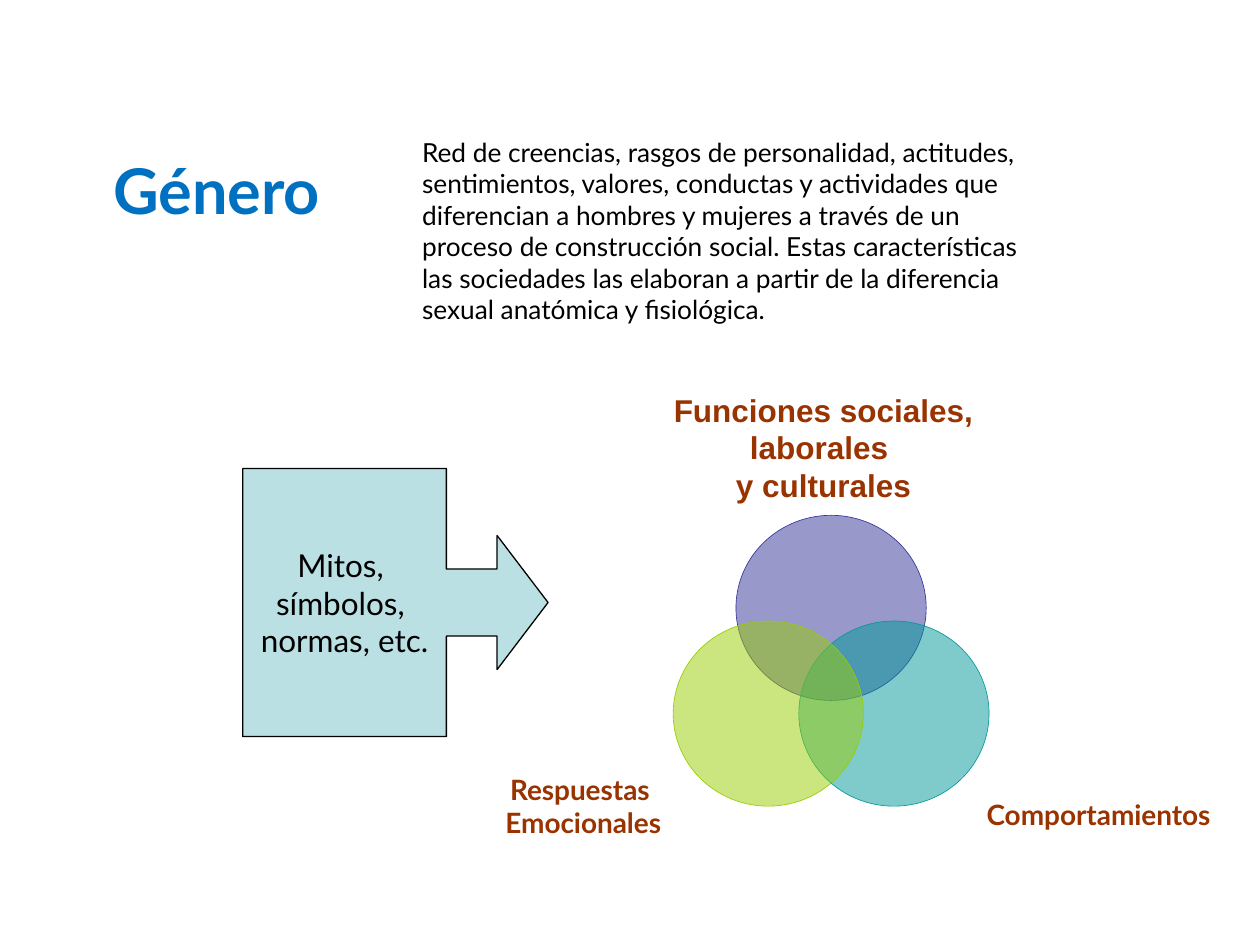
from lxml.etree import SubElement
from pptx import Presentation
from pptx.dml.color import RGBColor
from pptx.enum.shapes import MSO_SHAPE
from pptx.enum.text import MSO_ANCHOR, MSO_AUTO_SIZE, PP_ALIGN
from pptx.oxml.ns import qn
from pptx.util import Pt

BLACK = RGBColor(0x00, 0x00, 0x00)
TITLE_BLUE = RGBColor(0x00, 0x70, 0xC0)
BROWN = RGBColor(0x99, 0x33, 0x00)
PALE_BLUE = RGBColor(0xBB, 0xE0, 0xE3)
INDIGO = RGBColor(0x33, 0x33, 0x99)
TEAL = RGBColor(0x00, 0x99, 0x99)
LIME = RGBColor(0x99, 0xCC, 0x00)

CIRCLE_WIDTH, CIRCLE_HEIGHT = 108.7, 105.8
VENN_CENTER, VENN_TOP = 474.9, 294.5
VENN_SHIFT, VENN_DROP = 35.9, 60.4

DEFINITION = (
    "Red de creencias, rasgos de personalidad, actitudes, sentimientos, valores, "
    "conductas y actividades que diferencian a hombres y mujeres a través de un "
    "proceso de construcción social. Estas características las sociedades las "
    "elaboran a partir de la diferencia sexual anatómica y fisiológica."
)


def write_text(shape, text, *, size, color=BLACK, font="Lato", bold=False,
               align=PP_ALIGN.CENTER, anchor=MSO_ANCHOR.MIDDLE, wrap=True,
               margins=(7.2, 3.6, 7.2, 3.6)):
    """Fill a shape with text, one paragraph per line; margins run left, top, right, bottom."""
    frame = shape.text_frame
    frame.text = text
    frame.auto_size = MSO_AUTO_SIZE.NONE
    frame.word_wrap = wrap
    frame.vertical_anchor = anchor
    (frame.margin_left, frame.margin_top,
     frame.margin_right, frame.margin_bottom) = map(Pt, margins)
    for paragraph in frame.paragraphs:
        paragraph.alignment = align
        for span in paragraph.runs:
            span.font.name = font
            span.font.size = Pt(size)
            span.font.bold = bold
            span.font.color.rgb = color


def add_text(page, text, left, top, width, height, **text_format):
    box = page.shapes.add_textbox(Pt(left), Pt(top), Pt(width), Pt(height))
    write_text(box, text, **text_format)


def add_filled_shape(page, kind, left, top, width, height, fill, line, line_width):
    shape = page.shapes.add_shape(kind, Pt(left), Pt(top), Pt(width), Pt(height))
    shape.shadow.inherit = False
    shape.fill.solid()
    shape.fill.fore_color.rgb = fill
    shape.line.color.rgb = line
    shape.line.width = Pt(line_width)
    return shape


def add_venn_circle(page, column, row, color):
    """Add a half-transparent circle; column is its offset from the centre of the diagram."""
    left = VENN_CENTER - CIRCLE_WIDTH / 2 + column * VENN_SHIFT
    top = VENN_TOP + row * VENN_DROP
    circle = add_filled_shape(page, MSO_SHAPE.OVAL, left, top,
                              CIRCLE_WIDTH, CIRCLE_HEIGHT, color, color, 0.37)
    fill_color = circle._element.spPr.find(qn("a:solidFill")).find(qn("a:srgbClr"))
    SubElement(fill_color, qn("a:alpha"), val="50000")


def add_title(page, text):
    title = page.shapes.title
    title.left, title.top, title.width, title.height = map(Pt, (36.7, 74.2, 174.2, 67.7))
    write_text(title, text, size=36, color=TITLE_BLUE, bold=True)


def add_callout(page, text):
    callout = add_filled_shape(page, MSO_SHAPE.RIGHT_ARROW_CALLOUT, 138.7, 267.7,
                               174.5, 153.2, PALE_BLUE, BLACK, 0.75)
    for index, value in enumerate((0.25, 0.25, 0.19, 0.667)):
        callout.adjustments[index] = value
    write_text(callout, text, size=18, wrap=False)


def main():
    deck = Presentation()
    deck.slide_width, deck.slide_height = Pt(720), Pt(540)
    page = deck.slides.add_slide(deck.slide_layouts[5])

    add_title(page, "Género")
    add_text(page, DEFINITION, 198, 74.2, 395.3, 106.6, size=15, align=PP_ALIGN.LEFT,
             anchor=MSO_ANCHOR.TOP, margins=(43.2, 3.6, 7.2, 3.6))
    add_callout(page, "Mitos, \nsímbolos, \nnormas, etc.")

    for column, row, color in ((0, 0, INDIGO), (1, 1, TEAL), (-1, 1, LIME)):
        add_venn_circle(page, column, row, color)

    add_text(page, "Funciones sociales, laborales \ny culturales", 364.3, 219.6, 212.4, 72.7,
             size=18, font="Arial", color=BROWN, bold=True, anchor=MSO_ANCHOR.TOP)
    for text, left, top in (("Respuestas \nEmocionales", 306, 447.1),
                            ("Comportamientos", 600.5, 452.2)):
        add_text(page, text, left, top, 54.7, 26.6, size=16, color=BROWN, bold=True,
                 wrap=False, margins=(5, 2.9, 5, 2.9))

    deck.save("out.pptx")


if __name__ == "__main__":
    main()
